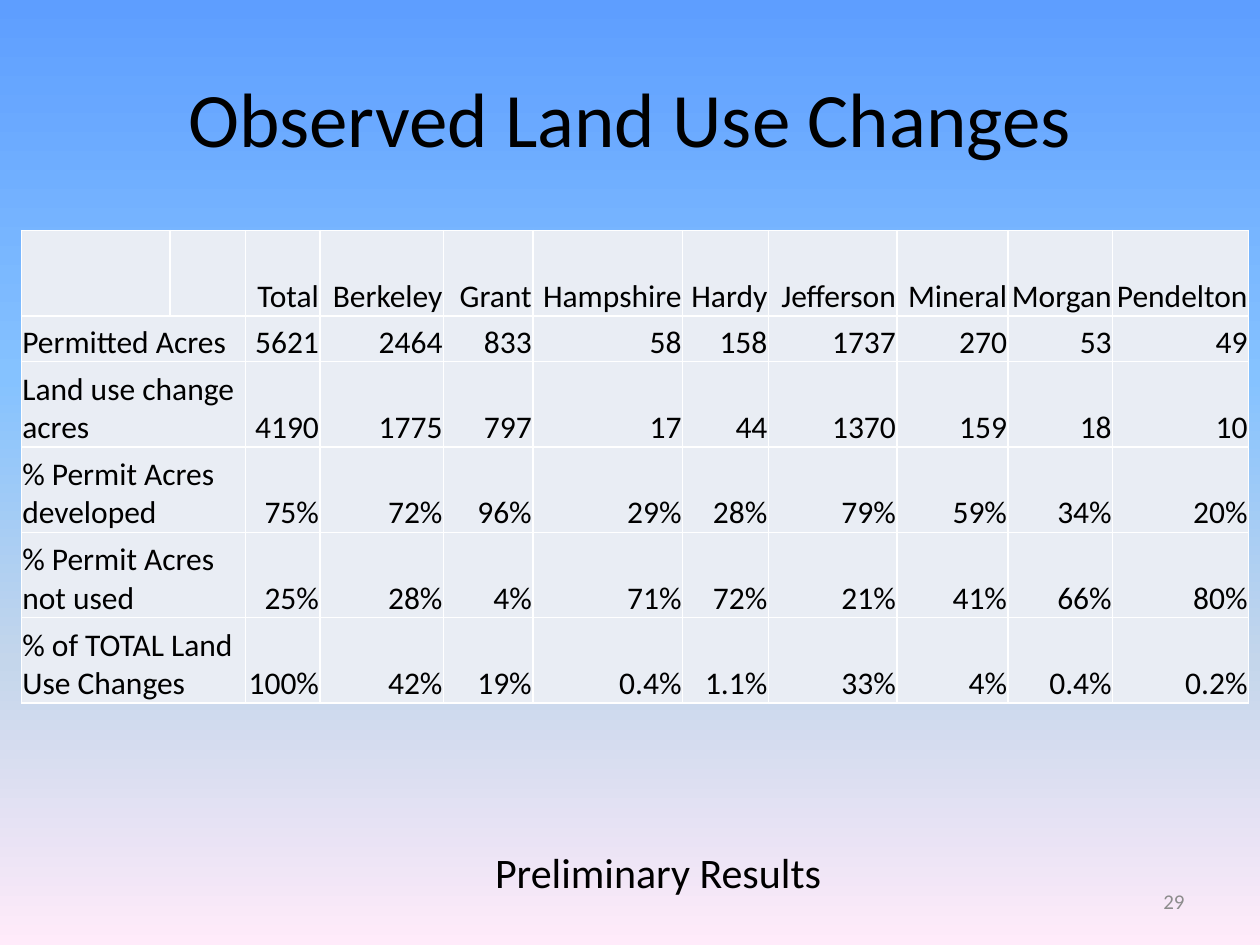
from dataclasses import dataclass

import lxml.etree
import pptx
import pptx.dml.color
import pptx.enum.text
import pptx.oxml.ns
import pptx.util

Cm = pptx.util.Cm
Pt = pptx.util.Pt
Align = pptx.enum.text.PP_ALIGN
Anchor = pptx.enum.text.MSO_ANCHOR
qn = pptx.oxml.ns.qn


@dataclass(frozen=True)
class Theme:
    font: str = "Calibri"
    text: str = "000000"
    muted: str = "8C8C8C"
    cell: str = "E9EDF4"
    border: str = "FFFFFF"
    sky: tuple = ((0, "5E9EFF"), (40, "85C2FF"), (70, "C4D6EB"), (100, "FFEBFA"))
    title_size: int = 44
    note_size: int = 24
    table_size: int = 18
    number_size: int = 12


THEME = Theme()

COLUMN_WIDTHS = (3, 1.52, 1.5, 2.49, 1.8, 3.02, 1.73, 2.59, 2.24, 2.11, 2.74)
ROW_HEIGHTS = (1.72, 0.92, 1.72, 1.72, 1.72, 1.72)
LABEL_COLUMNS = 2
ROWS = (
    ("", "Total", "Berkeley", "Grant", "Hampshire", "Hardy", "Jefferson",
     "Mineral", "Morgan", "Pendelton"),
    ("Permitted Acres", "5621", "2464", "833", "58", "158", "1737", "270", "53", "49"),
    ("Land use change acres", "4190", "1775", "797", "17", "44", "1370", "159", "18", "10"),
    ("% Permit Acres developed", "75%", "72%", "96%", "29%", "28%", "79%", "59%", "34%", "20%"),
    ("% Permit Acres not used", "25%", "28%", "4%", "71%", "72%", "21%", "41%", "66%", "80%"),
    ("% of TOTAL Land Use Changes", "100%", "42%", "19%", "0.4%", "1.1%", "33%", "4%",
     "0.4%", "0.2%"),
)


def rgb(value):
    return pptx.dml.color.RGBColor.from_string(value)


def paint_background(page):
    fill = page.background.fill
    fill.gradient()
    fill.gradient_angle = 270  # counter-clockwise: runs from top to bottom
    stops = page.element.find(".//" + qn("a:gsLst"))
    for stop in list(stops):
        stops.remove(stop)
    for percent, color in THEME.sky:
        stop = lxml.etree.SubElement(stops, qn("a:gs"), pos=str(percent * 1000))
        lxml.etree.SubElement(stop, qn("a:srgbClr"), val=color)


def write(frame, text, size, color=THEME.text, align=Align.LEFT):
    para = frame.paragraphs[0]
    para.text = text
    para.alignment = align
    para.font.name = THEME.font
    para.font.size = Pt(size)
    para.font.color.rgb = rgb(color)


def add_text(page, place, text, size, color=THEME.text, align=Align.LEFT,
             anchor=Anchor.MIDDLE, wrap=True):
    box = page.shapes.add_textbox(*(Cm(length) for length in place))
    frame = box.text_frame
    frame.word_wrap = wrap
    frame.vertical_anchor = anchor
    write(frame, text, size, color, align)


def style_cell(cell):
    cell.margin_left = cell.margin_right = cell.margin_top = Cm(0.02)
    cell.margin_bottom = 0
    cell.vertical_anchor = Anchor.BOTTOM
    properties = cell._tc.get_or_add_tcPr()
    for side in ("a:lnL", "a:lnR", "a:lnT", "a:lnB"):
        line = lxml.etree.SubElement(properties, qn(side), w=str(Pt(1)))
        solid = lxml.etree.SubElement(line, qn("a:solidFill"))
        lxml.etree.SubElement(solid, qn("a:srgbClr"), val=THEME.border)
    cell.fill.solid()
    cell.fill.fore_color.rgb = rgb(THEME.cell)


def add_land_use_table(page, left, top):
    table = page.shapes.add_table(
        len(ROW_HEIGHTS), len(COLUMN_WIDTHS), Cm(left), Cm(top),
        Cm(sum(COLUMN_WIDTHS)), Cm(sum(ROW_HEIGHTS))).table
    table.first_row = table.horz_banding = False
    for column, width in zip(table.columns, COLUMN_WIDTHS):
        column.width = Cm(width)
    for row, height in zip(table.rows, ROW_HEIGHTS):
        row.height = Cm(height)
    for cell in table.iter_cells():
        style_cell(cell)

    for index, (label, *values) in enumerate(ROWS):
        if label:
            label_cell = table.cell(index, 0)
            label_cell.merge(table.cell(index, LABEL_COLUMNS - 1))
            write(label_cell.text_frame, label, THEME.table_size)
        for column, value in enumerate(values, LABEL_COLUMNS):
            write(table.cell(index, column).text_frame, value, THEME.table_size,
                  align=Align.RIGHT)


def main():
    deck = pptx.Presentation()
    deck.slide_width, deck.slide_height = Cm(25.4), Cm(19.05)
    page = deck.slides.add_slide(deck.slide_layouts[6])
    paint_background(page)
    add_text(page, (1.27, 0.76, 22.86, 3.18), "Observed Land Use Changes",
             THEME.title_size, align=Align.CENTER)
    add_land_use_table(page, 0.43, 4.65)
    add_text(page, (9.73, 16.94, 7.16, 1.27), "Preliminary Results",
             THEME.note_size, anchor=Anchor.TOP, wrap=False)
    add_text(page, (18.2, 17.65, 5.93, 1.02), "29", THEME.number_size,
             THEME.muted, Align.RIGHT)
    deck.save("out.pptx")


if __name__ == "__main__":
    main()
